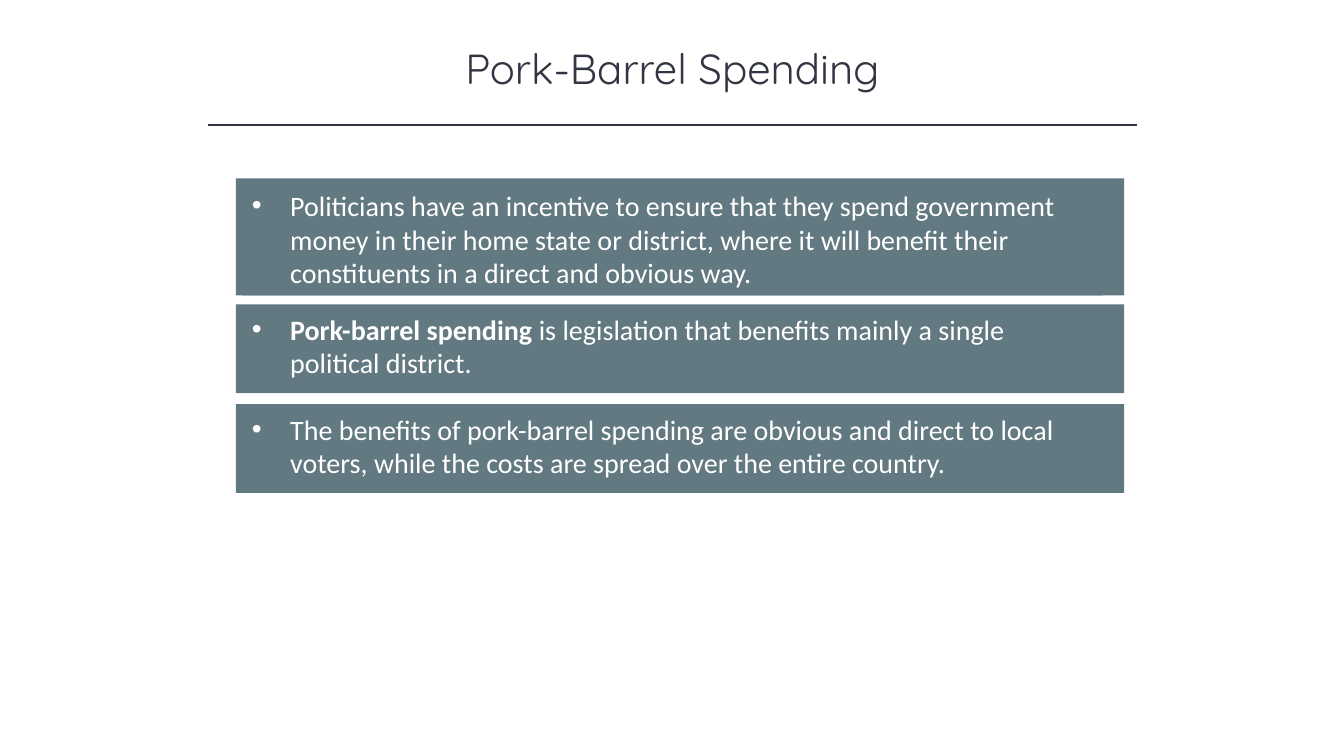
import pptx
import pptx.dml.color
import pptx.enum.shapes
import pptx.enum.text
import pptx.util
from lxml import etree
from pptx.oxml.ns import qn

PX = 9144


def px(length):
    return pptx.util.Emu(length * PX)


def colour(code):
    return pptx.dml.color.RGBColor.from_string(code)


class SlideBuilder:
    """Draws styled elements on one page, with lengths in px (100 to the inch)."""

    ink = "323542"
    panel_fill = "627981"
    light = "FFFFFF"

    def __init__(self, page):
        self.page = page

    def style(self, span, font, size, code, bold=False):
        span.font.name = font
        span.font.size = pptx.util.Pt(size)
        span.font.color.rgb = colour(code)
        span.font.bold = bold

    def title(self, left, top, width, height, text):
        box = self.page.shapes.add_textbox(px(left), px(top), px(width), px(height))
        frame = box.text_frame
        frame.word_wrap = True
        frame.text = text
        para = frame.paragraphs[0]
        para.alignment = pptx.enum.text.PP_ALIGN.CENTER
        self.style(para.runs[0], "Quicksand", 30, self.ink)

    def rule(self, left, right, top):
        line = self.page.shapes.add_connector(
            pptx.enum.shapes.MSO_CONNECTOR.STRAIGHT, px(left), px(top), px(right), px(top))
        line.line.color.rgb = colour(self.ink)
        line.line.width = pptx.util.Pt(1)
        etree.SubElement(line._element.spPr, qn("a:effectLst"))

    def rectangle(self, group, left, top, width, height):
        box = group.shapes.add_shape(
            pptx.enum.shapes.MSO_SHAPE.RECTANGLE, px(left), px(top), px(width), px(height))
        box.shadow.inherit = False
        box.fill.solid()
        box.fill.fore_color.rgb = colour(self.panel_fill)
        box.line.fill.background()
        return box

    def bullet(self, para):
        properties = para._p.get_or_add_pPr()
        properties.set("marL", str(px(38)))
        properties.set("indent", str(px(-38)))
        font = etree.SubElement(properties, qn("a:buFont"))
        font.set("typeface", "Arial")
        mark = etree.SubElement(properties, qn("a:buChar"))
        mark.set("char", "•")

    def panel(self, top, height, inset, text_height, term, text):
        group = self.page.shapes.add_group_shape()
        self.rectangle(group, 234, top, 881, height)
        box = self.rectangle(group, 240, top + inset, 854, text_height)
        frame = box.text_frame
        frame.word_wrap = True
        frame.vertical_anchor = pptx.enum.text.MSO_ANCHOR.TOP
        para = frame.paragraphs[0]
        para.alignment = pptx.enum.text.PP_ALIGN.LEFT
        self.bullet(para)
        for words, bold in ((term, True), (text, False)):
            if words:
                span = para.add_run()
                span.text = words
                self.style(span, "Calibri", 20, self.light, bold)


PANELS = [
    (177, 116, 5, 111, "",
     "Politicians have an incentive to ensure that they spend government money in "
     "their home state or district, where it will benefit their constituents in a "
     "direct and obvious way."),
    (302, 88, 3, 77, "Pork-barrel spending ",
     "is legislation that benefits mainly a single political district."),
    (401, 88, 3, 77, "",
     "The benefits of pork-barrel spending are obvious and direct to local voters, "
     "while the costs are spread over the entire country."),
]


def main():
    deck = pptx.Presentation()
    deck.slide_width = px(1333)
    deck.slide_height = px(750)
    builder = SlideBuilder(deck.slides.add_slide(deck.slide_layouts[6]))
    builder.title(167, 37, 1000, 61, "Pork-Barrel Spending")
    builder.rule(206, 1128, 124)
    for panel in PANELS:
        builder.panel(*panel)
    deck.save("out.pptx")


if __name__ == "__main__":
    main()
